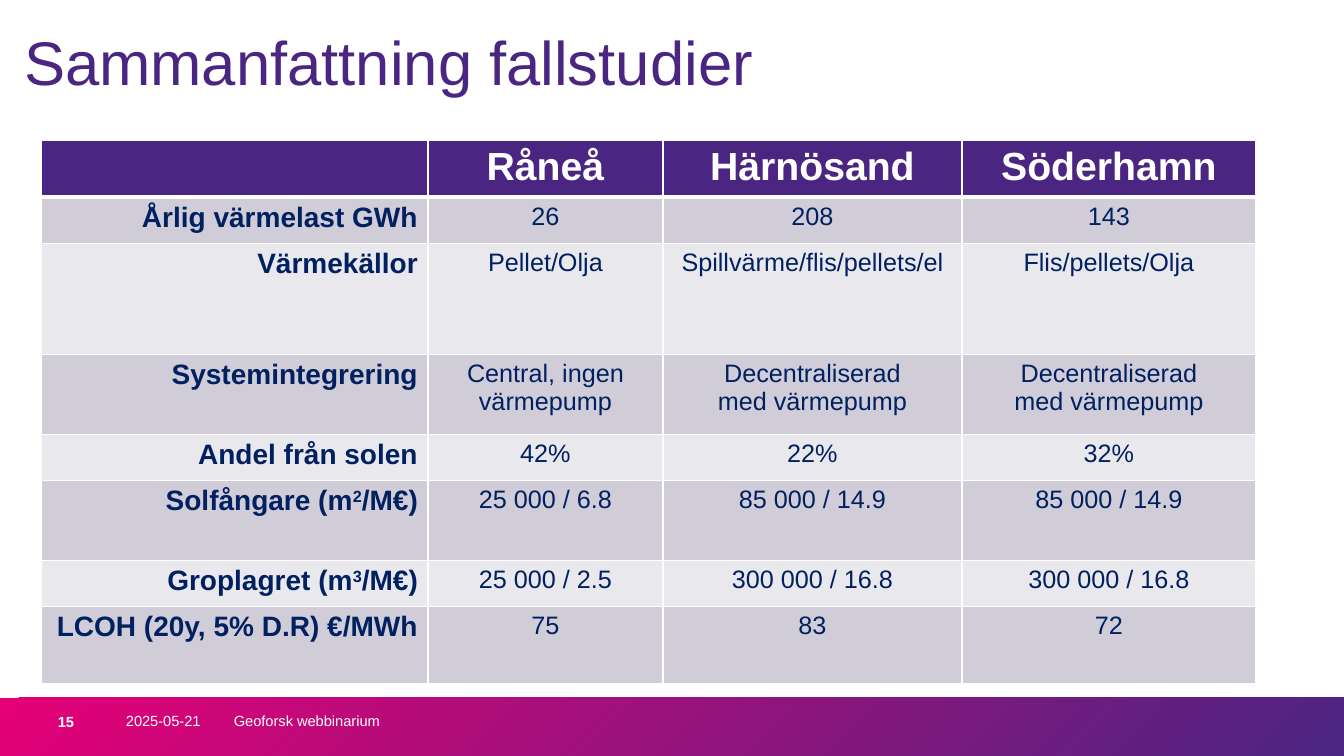
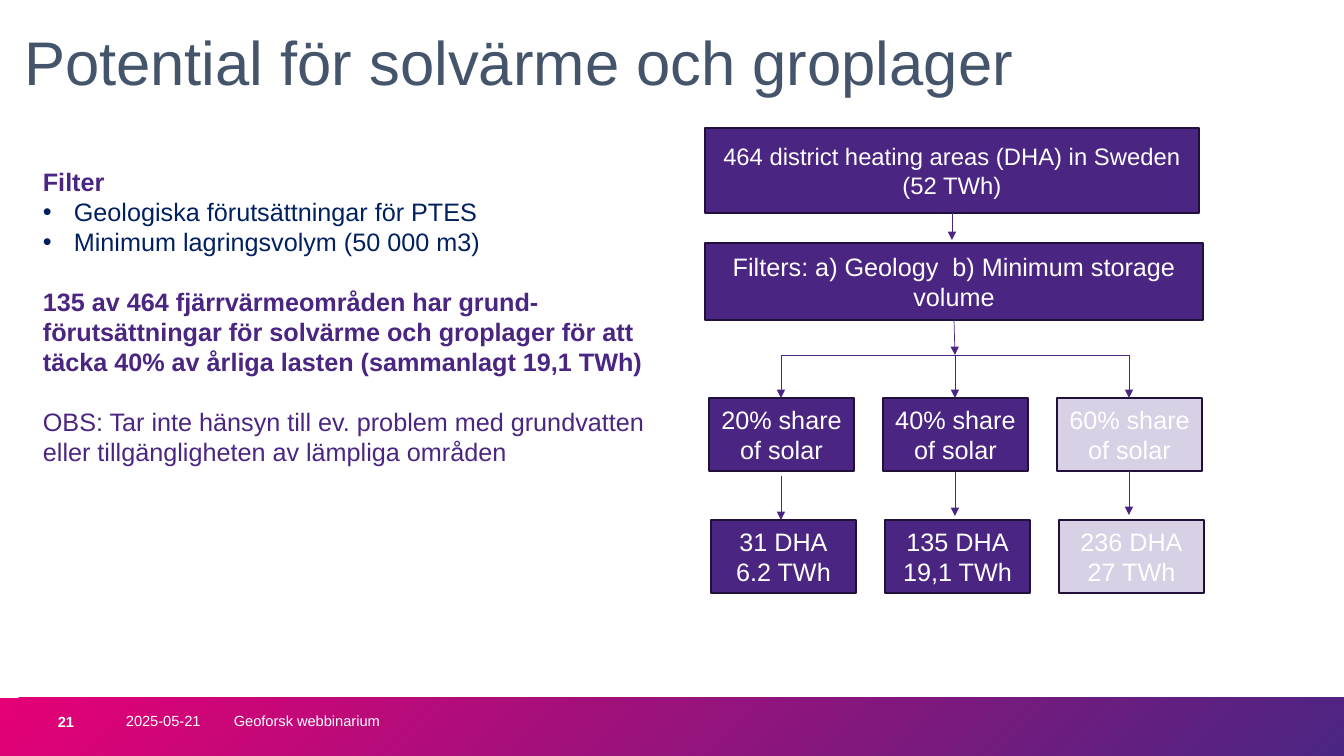
"""Build two slides on case studies and potential for solar heat with pit storage."""
from dataclasses import dataclass

import pptx
import pptx.dml.color
import pptx.enum.shapes
import pptx.enum.text
import pptx.oxml.ns
import pptx.util
from lxml import etree

EMU_PER_PX = 914400 / 100.8
FONT = "Arial"
PURPLE, PINK, OUTLINE = "4B2582", "E50076", "211039"
NAVY, SLATE, WHITE = "002060", "44546A", "FFFFFF"
BAND_FILLS = ("E9E8ED", "D0CDD8")
ALIGN = pptx.enum.text.PP_ALIGN
ANCHOR = pptx.enum.text.MSO_ANCHOR
RECTANGLE = pptx.enum.shapes.MSO_SHAPE.RECTANGLE
qn = pptx.oxml.ns.qn


@dataclass(frozen=True)
class Area:
    left: int
    top: int
    width: int
    height: int

    def emu(self):
        return [px(n) for n in (self.left, self.top, self.width, self.height)]


@dataclass(frozen=True)
class Style:
    size: float
    color: str
    bold: bool = False
    align: ALIGN = ALIGN.LEFT


@dataclass(frozen=True)
class Passage:
    text: str
    color: str = PURPLE
    bold: bool = False
    bullet: bool = False
    space_before: int = 0


@dataclass(frozen=True)
class Scenario:
    share: str
    result: str
    arrow_top: int
    alpha: int = 100


TITLE_AREA = Area(14, 27, 1268, 113)
BAND_AREA = Area(0, 698, 1344, 58)
NUMBER_AREA = Area(48, 708, 55, 40)
DATE_AREA = Area(116, 701, 103, 40)
EVENT_AREA = Area(224, 701, 454, 40)
FOOTER = Style(10.5, WHITE)

TABLE_AREA = Area(41, 140, 1215, 540)
COLUMN_WIDTHS = (387, 235, 299, 294)
ROW_HEIGHTS = (53, 46, 111, 80, 46, 80, 46, 78)
HEADER = Style(28, WHITE, True, ALIGN.CENTER)
ROW_LABEL = Style(20, NAVY, True, ALIGN.RIGHT)
VALUE = Style(18, NAVY, False, ALIGN.CENTER)
CASE_ROWS = (
    ("", "Råneå", "Härnösand", "Söderhamn"),
    ("Årlig värmelast GWh", "26", "208", "143"),
    ("Värmekällor", "Pellet/Olja", "Spillvärme/flis/pellets/el", "Flis/pellets/Olja"),
    ("Systemintegrering", "Central, ingen värmepump",
     "Decentraliserad\nmed värmepump", "Decentraliserad\nmed värmepump"),
    ("Andel från solen", "42%", "22%", "32%"),
    ("Solfångare (m^2^/M€)", "25 000 / 6.8", "85 000 / 14.9", "85 000 / 14.9"),
    ("Groplagret (m^3^/M€)", "25 000 / 2.5", "300 000 / 16.8", "300 000 / 16.8"),
    ("LCOH (20y, 5% D.R) €/MWh", "75", "83", "72"),
)

PASSAGES = (
    Passage("Filter", bold=True),
    Passage("Geologiska förutsättningar för PTES", NAVY, bullet=True),
    Passage("Minimum lagringsvolym (50 000 m3)", NAVY, bullet=True),
    Passage("135 av 464 fjärrvärmeområden har grund-förutsättningar för solvärme och "
            "groplager för att täcka 40% av årliga lasten (sammanlagt 19,1 TWh)",
            bold=True, space_before=21),
    Passage("OBS: Tar inte hänsyn till ev. problem med grundvatten eller "
            "tillgängligheten av lämpliga områden", space_before=21),
)
SCENARIOS = (
    Scenario("20% share of solar", "31 DHA\n6.2 TWh", 476),
    Scenario("40% share of solar", "135 DHA\n19,1 TWh", 472),
    Scenario("60% share of solar", "236 DHA\n27 TWh", 471, 21),
)
SCENARIO_PITCH = 174
BRANCH_LEFT, BRANCH_TOP = 781, 355
BOX_TEXT = Style(18, WHITE, False, ALIGN.CENTER)


def px(length: int) -> pptx.util.Emu:
    """Turn pixels into EMU."""
    return pptx.util.Emu(round(length * EMU_PER_PX))


def rgb(color: str) -> pptx.dml.color.RGBColor:
    """Turn a hex string into a colour."""
    return pptx.dml.color.RGBColor.from_string(color)


def format_paragraph(paragraph, style: Style) -> None:
    """Give a paragraph its alignment and font."""
    paragraph.alignment = style.align
    paragraph.font.name = FONT
    paragraph.font.size = pptx.util.Pt(style.size)
    paragraph.font.bold = style.bold
    paragraph.font.color.rgb = rgb(style.color)


def write(text_frame, text: str, style: Style) -> None:
    """Write lines as paragraphs, raising the parts between carets."""
    for index, line in enumerate(text.split("\n")):
        paragraph = text_frame.paragraphs[0] if index == 0 else text_frame.add_paragraph()
        format_paragraph(paragraph, style)
        for position, part in enumerate(line.split("^")):
            run = paragraph.add_run()
            run.text = part
            if position % 2:
                run._r.get_or_add_rPr().set("baseline", "30000")


def add_text(slide, area: Area, text: str, style: Style, anchor=ANCHOR.MIDDLE) -> None:
    """Add a wrapped text box."""
    text_frame = slide.shapes.add_textbox(*area.emu()).text_frame
    text_frame.word_wrap = True
    text_frame.vertical_anchor = anchor
    write(text_frame, text, style)


def add_box(slide, area: Area, text: str, style: Style = BOX_TEXT, alpha: int = 100) -> None:
    """Add a purple box with centred text."""
    shape = slide.shapes.add_shape(RECTANGLE, *area.emu())
    shape.shadow.inherit = False
    shape.fill.solid()
    shape.fill.fore_color.rgb = rgb(PURPLE)
    if alpha < 100:
        color = shape._element.spPr.find(qn("a:solidFill")).find(qn("a:srgbClr"))
        etree.SubElement(color, qn("a:alpha"), val=str(alpha * 1000))
    shape.line.color.rgb = rgb(OUTLINE)
    shape.line.width = pptx.util.Pt(1)
    shape.text_frame.word_wrap = True
    shape.text_frame.vertical_anchor = ANCHOR.MIDDLE
    write(shape.text_frame, text, style)


def add_line(slide, start: tuple[int, int], end: tuple[int, int], arrow: bool = True) -> None:
    """Add a thin line, by default with an arrowhead at its end."""
    connector = slide.shapes.add_connector(
        pptx.enum.shapes.MSO_CONNECTOR.STRAIGHT, *map(px, start + end))
    connector.line.color.rgb = rgb(PURPLE)
    connector.line.width = pptx.util.Pt(0.5)
    properties = connector._element.spPr
    if arrow:
        etree.SubElement(properties.find(qn("a:ln")), qn("a:tailEnd"), type="triangle")
    etree.SubElement(properties, qn("a:effectLst"))


def add_slide(presentation, title: str, title_color: str, number: str):
    """Add a slide with its title, gradient band and footer."""
    slide = presentation.slides.add_slide(presentation.slide_layouts[5])
    heading = slide.shapes.title
    heading.left, heading.top, heading.width, heading.height = TITLE_AREA.emu()
    heading.text_frame.auto_size = pptx.enum.text.MSO_AUTO_SIZE.NONE
    heading.text_frame.vertical_anchor = ANCHOR.TOP
    write(heading.text_frame, title, Style(44, title_color))
    heading.text_frame.paragraphs[0].line_spacing = 0.9

    band = slide.shapes.add_shape(RECTANGLE, *BAND_AREA.emu())
    band.shadow.inherit = False
    band.line.fill.background()
    band.fill.gradient()
    band.fill.gradient_angle = 315
    for stop, color in zip(band.fill.gradient_stops, (PINK, PURPLE)):
        stop.color.rgb = rgb(color)

    add_text(slide, DATE_AREA, "2025-05-21", FOOTER)
    add_text(slide, EVENT_AREA, "Geoforsk webbinarium", FOOTER)
    add_text(slide, NUMBER_AREA, number, Style(10.5, WHITE, True), ANCHOR.TOP)
    return slide


def format_cell(cell, fill: str, bottom: int, top: int) -> None:
    """Give a cell white borders, with widths in points, and a fill."""
    properties = cell._tc.get_or_add_tcPr()
    for side, width in (("L", 1), ("R", 1), ("T", top), ("B", bottom)):
        border = etree.SubElement(properties, qn(f"a:ln{side}"), w=str(pptx.util.Pt(width)))
        solid = etree.SubElement(border, qn("a:solidFill"))
        etree.SubElement(solid, qn("a:srgbClr"), val=WHITE)
    cell.fill.solid()
    cell.fill.fore_color.rgb = rgb(fill)


def add_case_table(slide) -> None:
    """Add the table that compares the three towns."""
    table = slide.shapes.add_table(
        len(ROW_HEIGHTS), len(COLUMN_WIDTHS), *TABLE_AREA.emu()).table
    table.first_row = table.horz_banding = False
    for column, width in zip(table.columns, COLUMN_WIDTHS):
        column.width = px(width)
    for row_index, texts in enumerate(CASE_ROWS):
        table.rows[row_index].height = px(ROW_HEIGHTS[row_index])
        fill = BAND_FILLS[row_index % 2] if row_index else PURPLE
        for column_index, text in enumerate(texts):
            cell = table.cell(row_index, column_index)
            format_cell(cell, fill, 1 if row_index else 3, 3 if row_index == 1 else 1)
            style = HEADER if row_index == 0 else VALUE if column_index else ROW_LABEL
            if text:
                write(cell.text_frame, text, style)


def add_passages(slide) -> None:
    """Add the text about filters and the areas that pass them."""
    text_frame = slide.shapes.add_textbox(*Area(33, 161, 651, 377).emu()).text_frame
    text_frame.word_wrap = True
    for index, passage in enumerate(PASSAGES):
        paragraph = text_frame.paragraphs[0] if index == 0 else text_frame.add_paragraph()
        paragraph.text = passage.text
        if passage.space_before:
            paragraph.space_before = pptx.util.Pt(passage.space_before)
        if passage.bullet:
            properties = paragraph._p.get_or_add_pPr()
            properties.set("marL", str(px(31)))
            properties.set("indent", str(-px(31)))
            etree.SubElement(properties, qn("a:buFont"), typeface=FONT)
            etree.SubElement(properties, qn("a:buChar"), char="•")
        format_paragraph(paragraph, Style(18, passage.color, passage.bold))


def add_filter_flow(slide) -> None:
    """Add the flow from all areas through the filters to three scenarios."""
    add_box(slide, Area(705, 128, 494, 85),
            "464 district heating areas (DHA) in Sweden\n(52 TWh)",
            Style(17, WHITE, False, ALIGN.CENTER))
    add_box(slide, Area(705, 243, 498, 77), "Filters: a) Geology  b) Minimum storage volume")
    add_line(slide, (952, 213), (952, 240))
    add_line(slide, (954, 319), (955, BRANCH_TOP))
    branch_right = BRANCH_LEFT + SCENARIO_PITCH * (len(SCENARIOS) - 1)
    add_line(slide, (BRANCH_LEFT, BRANCH_TOP), (branch_right, BRANCH_TOP), arrow=False)
    for index, scenario in enumerate(SCENARIOS):
        offset = SCENARIO_PITCH * index
        center = BRANCH_LEFT + offset
        add_box(slide, Area(709 + offset, 398, 145, 73), scenario.share, alpha=scenario.alpha)
        add_box(slide, Area(711 + offset, 520, 145, 73), scenario.result, alpha=scenario.alpha)
        add_line(slide, (center, BRANCH_TOP), (center, 398))
        add_line(slide, (center, scenario.arrow_top), (center, scenario.arrow_top + 44))


def main() -> None:
    """Build and save the presentation."""
    presentation = pptx.Presentation()
    presentation.slide_width, presentation.slide_height = px(1344), px(756)
    add_case_table(add_slide(presentation, "Sammanfattning fallstudier", PURPLE, "15"))
    potential = add_slide(presentation, "Potential för solvärme och groplager", SLATE, "21")
    add_passages(potential)
    add_filter_flow(potential)
    presentation.save("out.pptx")


if __name__ == "__main__":
    main()
